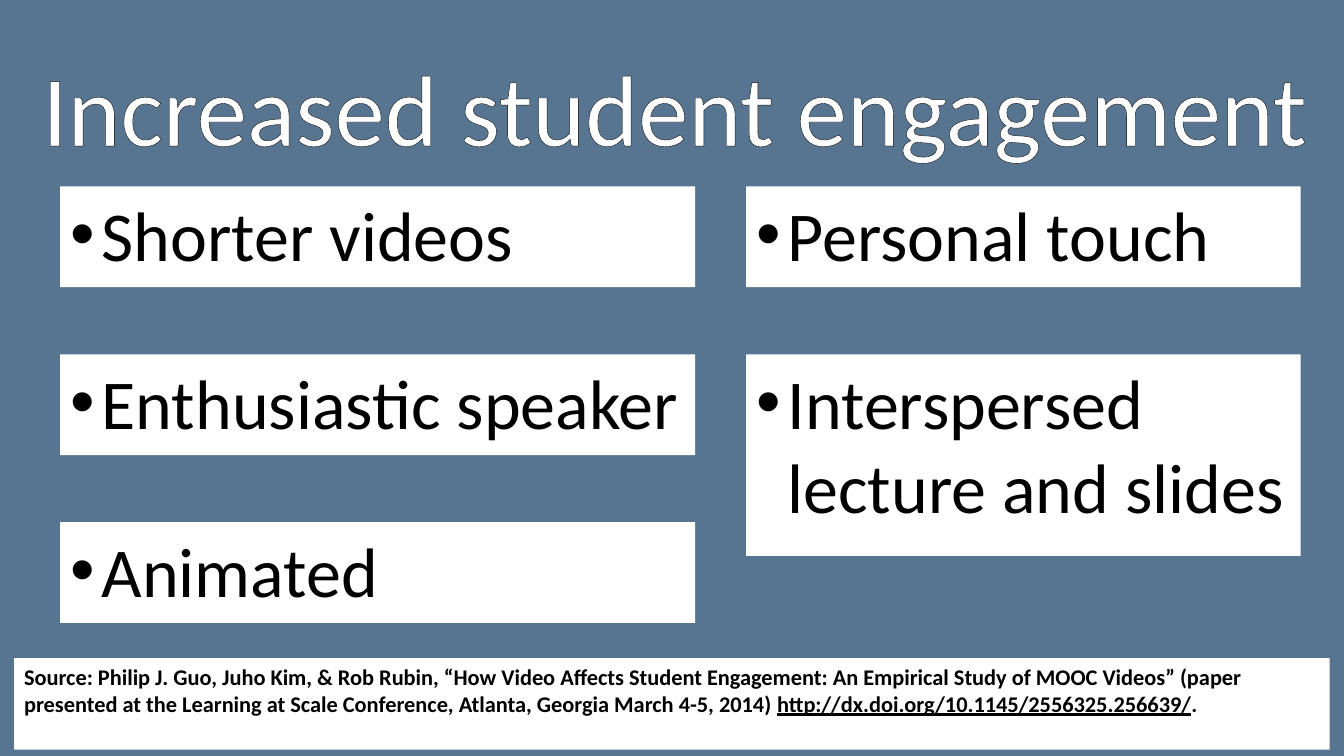
from pptx import Presentation
from pptx.dml.color import RGBColor
from pptx.enum import shapes as sh, text as tx
from pptx.oxml import parse_xml
from pptx.oxml.ns import nsdecls
from pptx.util import Pt

BLUE = RGBColor(0x57, 0x75, 0x90)
WHITE = RGBColor(255, 255, 255)
BLACK = RGBColor(0, 0, 0)
FONT = "Calibri"


def style(run, size, color, bold=False, line=False):
    font = run.font
    font.name, font.size, font.bold, font.underline = FONT, Pt(size), bold, line
    font.color.rgb = color


def panel(slide, box):
    """White rectangle with top-left text."""
    rect = slide.shapes.add_shape(sh.MSO_SHAPE.RECTANGLE, *map(Pt, box))
    rect.shadow.inherit = False
    rect.fill.solid()
    rect.fill.fore_color.rgb = WHITE
    rect.line.fill.background()
    frame = rect.text_frame
    frame.word_wrap = True
    frame.vertical_anchor = tx.MSO_ANCHOR.TOP
    frame.paragraphs[0].alignment = tx.PP_ALIGN.LEFT
    return frame.paragraphs[0]


def title(slide, box, words):
    head = slide.shapes.title
    head.left, head.top, head.width, head.height = map(Pt, box)
    frame = head.text_frame
    frame.text = words
    frame.word_wrap = True
    frame.auto_size = tx.MSO_AUTO_SIZE.NONE
    frame.vertical_anchor = tx.MSO_ANCHOR.MIDDLE
    para = frame.paragraphs[0]
    para.alignment = tx.PP_ALIGN.LEFT
    para.line_spacing = 0.9
    run = para.runs[0]
    style(run, 72, WHITE)
    # Thin black outline around the letters
    run.font._element.insert(0, parse_xml(
        f'<a:ln {nsdecls("a")} w="{Pt(0.75)}"><a:solidFill>'
        f'<a:srgbClr val="{BLACK}"/></a:solidFill></a:ln>'))


def column(slide, box, items, step=119.9):
    """Stack of bullet panels; each item gives its text and line count."""
    left, top, width, unit = box
    for row, (words, lines) in enumerate(items):
        para = panel(slide, (left, top + row * step, width, unit * lines))
        para.text = words
        style(para.runs[0], 50, BLACK)
        props = para._p.get_or_add_pPr()
        props.set("marL", str(Pt(22.5)))
        props.set("indent", str(-Pt(22.5)))
        props.append(parse_xml(f'<a:buFont {nsdecls("a")} typeface="Arial"/>'))
        props.append(parse_xml(f'<a:buChar {nsdecls("a")} char="•"/>'))


def source(slide, box, parts):
    para = panel(slide, box)
    for words, line in parts:
        run = para.add_run()
        run.text = words
        style(run, 16, BLACK, True, line)


def main():
    deck = Presentation()
    deck.slide_width, deck.slide_height = Pt(960), Pt(540)
    slide = deck.slides.add_slide(deck.slide_layouts[5])
    slide.background.fill.solid()
    slide.background.fill.fore_color.rgb = BLUE

    # Heading
    title(slide, (23, 28.8, 926.6, 104.4), "Increased student engagement")

    # Source note
    source(slide, (10.1, 470, 939.6, 65.5), [
        ("Source: Philip J. Guo, Juho Kim, & Rob Rubin, “How Video Affects "
         "Student Engagement: An Empirical Study of MOOC Videos” (paper "
         "presented at the Learning at Scale Conference, Atlanta, Georgia "
         "March 4-5, 2014) ", False),
        ("http://dx.doi.org/10.1145/2556325.256639/", True),
        (".", False)])

    # Two columns of findings
    column(slide, (43, 133.2, 453.6, 72), [
        ("Shorter videos", 1), ("Enthusiastic speaker", 1), ("Animated", 1)])
    column(slide, (533, 133.2, 396, 72), [
        ("Personal touch", 1), ("Interspersed lecture and slides", 2)])

    deck.save("out.pptx")


if __name__ == "__main__":
    main()
